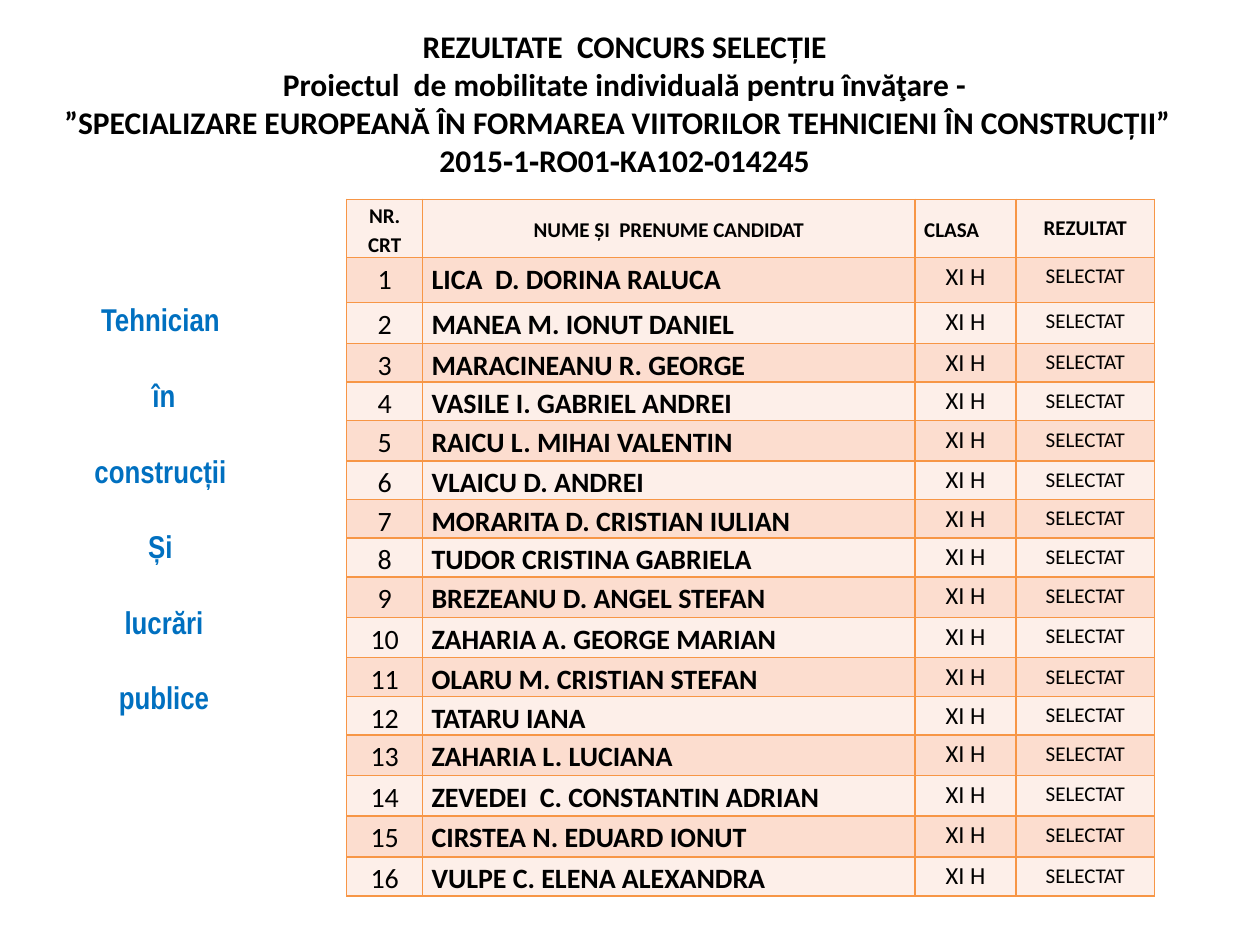
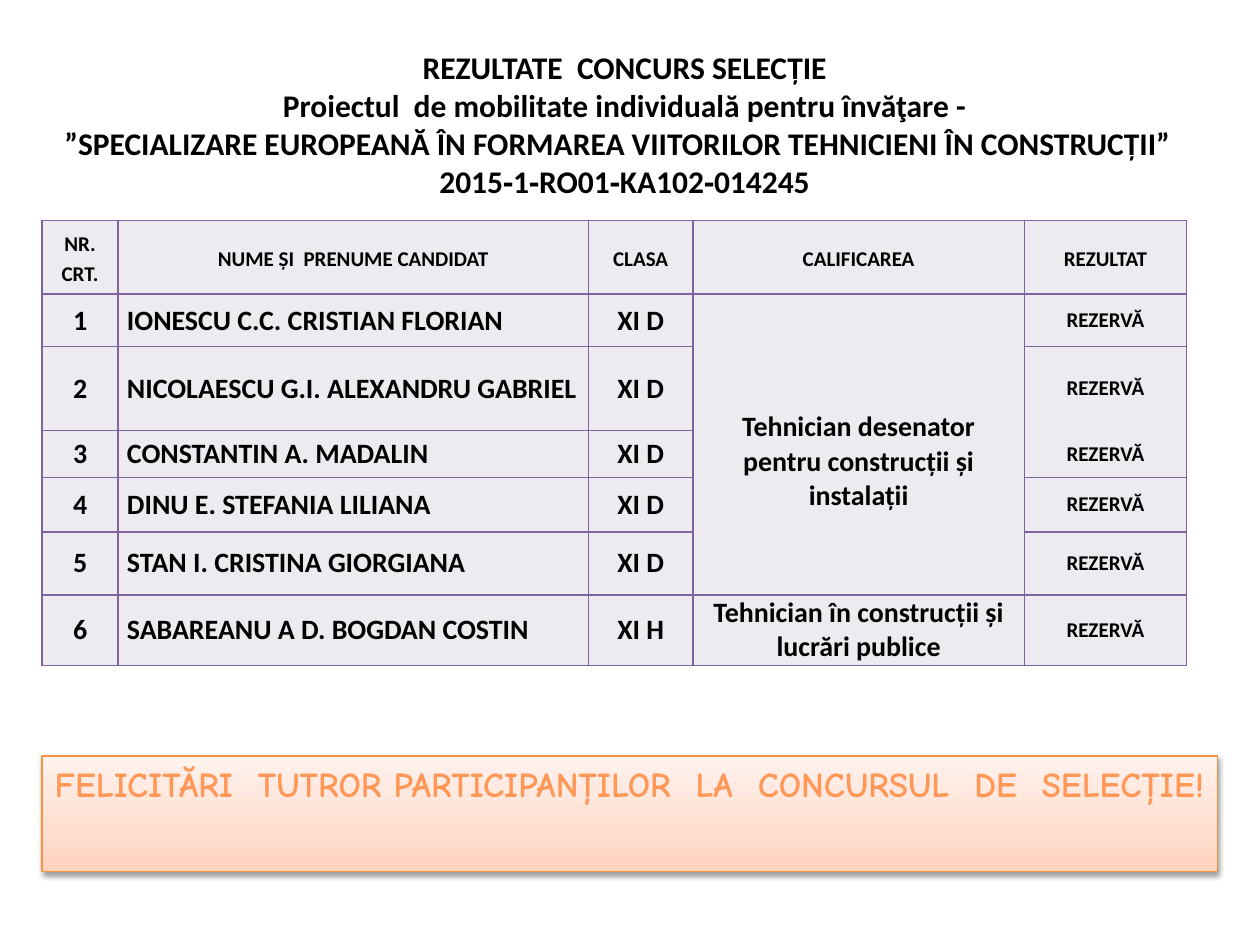
"""Builds the two slides with the results of the selection contest."""
from dataclasses import dataclass

from lxml import etree
from pptx import Presentation
from pptx.dml.color import RGBColor
from pptx.enum.shapes import MSO_SHAPE
from pptx.enum.text import MSO_ANCHOR, PP_ALIGN
from pptx.oxml.ns import qn
from pptx.util import Cm, Pt

CENTER, LEFT = PP_ALIGN.CENTER, PP_ALIGN.LEFT
TOP, MIDDLE = MSO_ANCHOR.TOP, MSO_ANCHOR.MIDDLE
RECTANGLE = MSO_SHAPE.RECTANGLE

BLACK, BLUE = "000000", "0070C0"
ORANGE, PURPLE = "F79646", "8064A2"
ORANGE_BANDS = ("FDEFE9", "FCDDCF")
PURPLE_BANDS = ("EDEAF0",)
BANNER_LINE = "F69240"
BANNER_STOPS = ((0, "FFD2BD"), (35, "FFDED0"), (100, "FFF2ED"))
LETTER_STOPS = ((0, "9D4700"), (78, "FF9856"), (100, "FFF5F1"))

BODY_FONT, SIDE_FONT, BANNER_FONT = "Calibri", "Arial Narrow", "Comic Neue"

TITLE_LINES = (
    "REZULTATE  CONCURS SELECȚIE",
    "Proiectul  de mobilitate individuală pentru învăţare -",
    "”SPECIALIZARE EUROPEANĂ ÎN FORMAREA VIITORILOR TEHNICIENI ÎN CONSTRUCȚII”  ",
    "2015‐1‐RO01‐KA102‐014245",
)
QUALIFICATION_LINES = ("Tehnician", " în", " construcții ", "Și", " lucrări", " publice")
CONGRATULATION = "FELICITĂRI  TUTROR PARTICIPANȚILOR  LA  CONCURSUL  DE  SELECȚIE!"

SELECTED = (
    "LICA  D. DORINA RALUCA",
    "MANEA M. IONUT DANIEL",
    "MARACINEANU R. GEORGE",
    "VASILE I. GABRIEL ANDREI",
    "RAICU L. MIHAI VALENTIN",
    "VLAICU D. ANDREI",
    "MORARITA D. CRISTIAN IULIAN",
    "TUDOR CRISTINA GABRIELA",
    "BREZEANU D. ANGEL STEFAN",
    "ZAHARIA A. GEORGE MARIAN",
    "OLARU M. CRISTIAN STEFAN",
    "TATARU IANA",
    "ZAHARIA L. LUCIANA",
    "ZEVEDEI  C. CONSTANTIN ADRIAN",
    "CIRSTEA N. EDUARD IONUT",
    "VULPE C. ELENA ALEXANDRA",
)
RESERVE = "REZERVĂ"
RESERVES = (
    ("1", "IONESCU C.C. CRISTIAN FLORIAN", "XI D",
     "Tehnician desenator pentru construcții și instalații", RESERVE),
    ("2", "NICOLAESCU G.I. ALEXANDRU GABRIEL", "XI D", "", RESERVE),
    ("", "", "", "", RESERVE),
    ("3", "CONSTANTIN A. MADALIN", "XI D", "", ""),
    ("4", "DINU E. STEFANIA LILIANA", "XI D", "", RESERVE),
    ("5", "STAN I. CRISTINA GIORGIANA", "XI D", "", RESERVE),
    ("6", "SABAREANU A D. BOGDAN COSTIN", "XI H",
     "Tehnician în construcții și lucrări publice", RESERVE),
)


@dataclass(frozen=True)
class Column:
    """Heading, width in cm and text style of one table column."""
    heading: str
    width: float
    size: int = 16
    bold: bool = True
    align: PP_ALIGN = CENTER
    heading_align: PP_ALIGN = CENTER
    heading_spacing: float = 1.15
    spacing: float = 1.0
    side_inset: float = 0.18
    top_inset: float = 0


@dataclass(frozen=True)
class Merge:
    """First row, last row and column of cells joined downwards."""
    first: int
    last: int
    column: int


@dataclass(frozen=True)
class ResultTable:
    """Place in cm, columns, rows and colours of one result table."""
    left: float
    top: float
    columns: tuple
    heights: tuple
    rows: tuple
    line: str
    bands: tuple
    anchor: MSO_ANCHOR
    merges: tuple = ()


SELECTED_TABLE = ResultTable(
    6.99, 4.02,
    (
        Column("NR. CRT", 1.53, bold=False, spacing=1.15),
        Column("NUME ȘI  PRENUME CANDIDAT", 9.93, align=LEFT, spacing=1.15),
        Column("CLASA", 2.03, size=14, bold=False, heading_align=LEFT, spacing=1.15),
        Column("REZULTAT", 2.8, size=12, bold=False, heading_spacing=1.0,
               side_inset=0.25, top_inset=0.13),
    ),
    (1.17, 0.91, 0.82, 0.77, 0.78, 0.81, 0.78, 0.78, 0.78,
     0.82, 0.81, 0.78, 0.78, 0.81, 0.82, 0.83, 0.78),
    tuple((str(number), name, "XI H", "SELECTAT")
          for number, name in enumerate(SELECTED, 1)),
    ORANGE, ORANGE_BANDS, TOP,
)
RESERVE_TABLE = ResultTable(
    0.85, 4.45,
    (
        Column("NR. CRT.", 1.53),
        Column("NUME ȘI  PRENUME CANDIDAT", 9.48, align=LEFT),
        Column("CLASA", 2.11),
        Column("CALIFICAREA", 6.68),
        Column("REZULTAT", 3.27, size=12),
    ),
    (1.48, 1.06, 1.69, 0, 0.95, 1.09, 1.27, 1.43),
    RESERVES, PURPLE, PURPLE_BANDS, MIDDLE,
    (*(Merge(2, 3, column) for column in range(3)), Merge(1, 6, 3), Merge(3, 4, 4)),
)


def color(value: str) -> RGBColor:
    """Return the colour for a hex string."""
    return RGBColor.from_string(value)


def add_span(para, text: str, size: int, bold: bool = True,
             font: str = BODY_FONT, ink: str = BLACK):
    """Add one styled run to a paragraph and return it."""
    span = para.add_run()
    span.text = text
    span.font.name = font
    span.font.size = Pt(size)
    span.font.bold = bold
    span.font.color.rgb = color(ink)
    return span


def add_color_node(parent, value: str):
    """Append a colour element and return it."""
    return etree.SubElement(parent, qn("a:srgbClr"), val=value)


def paint_gradient(fill, holder, stops: tuple, angle: int) -> None:
    """Give a fill the listed gradient stops."""
    fill.gradient()
    fill.gradient_angle = angle
    stop_list = holder.find(qn("a:gradFill")).find(qn("a:gsLst"))
    for old_stop in list(stop_list):
        stop_list.remove(old_stop)
    for percent, value in stops:
        stop = etree.SubElement(stop_list, qn("a:gs"), pos=str(percent * 1000))
        add_color_node(stop, value)


def add_title(page, top: float) -> None:
    """Add the shared four-line title at the given height."""
    box = page.shapes.add_textbox(Cm(0.43), Cm(top), Cm(24.33), Cm(3.39))
    box.text_frame.word_wrap = True
    para = box.text_frame.paragraphs[0]
    para.alignment = CENTER
    for index, line in enumerate(TITLE_LINES):
        if index:
            para.add_line_break()
        add_span(para, line, 18)


def add_qualification(page) -> None:
    """Add the spaced blue words beside the table."""
    box = page.shapes.add_textbox(Cm(1.48), Cm(5.93), Cm(3.51), Cm(8.71))
    frame = box.text_frame
    frame.word_wrap = False
    for index, line in enumerate(QUALIFICATION_LINES):
        para = frame.add_paragraph() if index else frame.paragraphs[0]
        para.alignment = CENTER
        para.space_after = Pt(21.6)
        add_span(para, line, 18, font=SIDE_FONT, ink=BLUE)


def add_borders(cell, value: str) -> None:
    """Draw a one-point line on all four sides of a cell."""
    properties = cell._tc.get_or_add_tcPr()
    for side in ("a:lnL", "a:lnR", "a:lnT", "a:lnB"):
        line = etree.SubElement(properties, qn(side), w=str(Pt(1)))
        add_color_node(etree.SubElement(line, qn("a:solidFill")), value)


def fill_cell(cell, text: str, column: Column, is_heading: bool) -> None:
    """Write a cell in the style of its column."""
    cell.margin_left = cell.margin_right = Cm(column.side_inset)
    cell.margin_top = cell.margin_bottom = Cm(column.top_inset)
    para = cell.text_frame.paragraphs[0]
    para.alignment = column.heading_align if is_heading else column.align
    para.line_spacing = column.heading_spacing if is_heading else column.spacing
    if text:
        add_span(para, text, 12 if is_heading else column.size,
                 is_heading or column.bold)


def add_results(page, results: ResultTable):
    """Add a result table and return it."""
    headings = tuple(column.heading for column in results.columns)
    rows = (headings, *results.rows)
    width = sum(column.width for column in results.columns)
    table = page.shapes.add_table(
        len(rows), len(headings), Cm(results.left), Cm(results.top),
        Cm(width), Cm(sum(results.heights))).table
    for place, column in zip(table.columns, results.columns):
        place.width = Cm(column.width)
    for row_index, (texts, height) in enumerate(zip(rows, results.heights)):
        table.rows[row_index].height = Cm(height)
        band = color(results.bands[row_index % len(results.bands)])
        for column_index, text in enumerate(texts):
            cell = table.cell(row_index, column_index)
            add_borders(cell, results.line)
            cell.fill.solid()
            cell.fill.fore_color.rgb = band
            cell.vertical_anchor = results.anchor if row_index else MIDDLE
            fill_cell(cell, text, results.columns[column_index], row_index == 0)
    for merge in results.merges:
        table.cell(merge.first, merge.column).merge(table.cell(merge.last, merge.column))
    return table


def add_banner(page) -> None:
    """Add the congratulation banner with gradients and a shadow."""
    banner = page.shapes.add_shape(RECTANGLE, Cm(0.85), Cm(15.24), Cm(23.7), Cm(2.33))
    properties = banner._element.spPr
    paint_gradient(banner.fill, properties, BANNER_STOPS, 90)
    banner.line.color.rgb = color(BANNER_LINE)
    banner.line.width = Pt(0.75)
    banner.shadow.inherit = False
    shadow = etree.SubElement(
        properties.find(qn("a:effectLst")), qn("a:outerShdw"),
        blurRad=str(Pt(3.1)), dist=str(Pt(1.6)), dir="5400000", rotWithShape="0")
    etree.SubElement(add_color_node(shadow, BLACK), qn("a:alpha"), val="38000")
    frame = banner.text_frame
    frame.word_wrap = False
    frame.vertical_anchor = TOP
    para = frame.paragraphs[0]
    para.alignment = CENTER
    span = add_span(para, CONGRATULATION, 20, font=BANNER_FONT)
    paint_gradient(span.font.fill, span._r.get_or_add_rPr(), LETTER_STOPS, 270)


def build_selected(page) -> None:
    """Build the slide with the selected candidates."""
    add_title(page, 0.43)
    add_results(page, SELECTED_TABLE)
    add_qualification(page)


def build_reserves(page) -> None:
    """Build the slide with the reserve candidates."""
    table = add_results(page, RESERVE_TABLE)
    table.cell(1, 3).margin_top = Cm(0.69)
    add_title(page, 0.85)
    add_banner(page)


def main() -> None:
    """Build and save the deck."""
    deck = Presentation()
    deck.slide_width, deck.slide_height = Cm(25.4), Cm(19.05)
    for build in (build_selected, build_reserves):
        build(deck.slides.add_slide(deck.slide_layouts[6]))
    deck.save("out.pptx")


if __name__ == "__main__":
    main()
